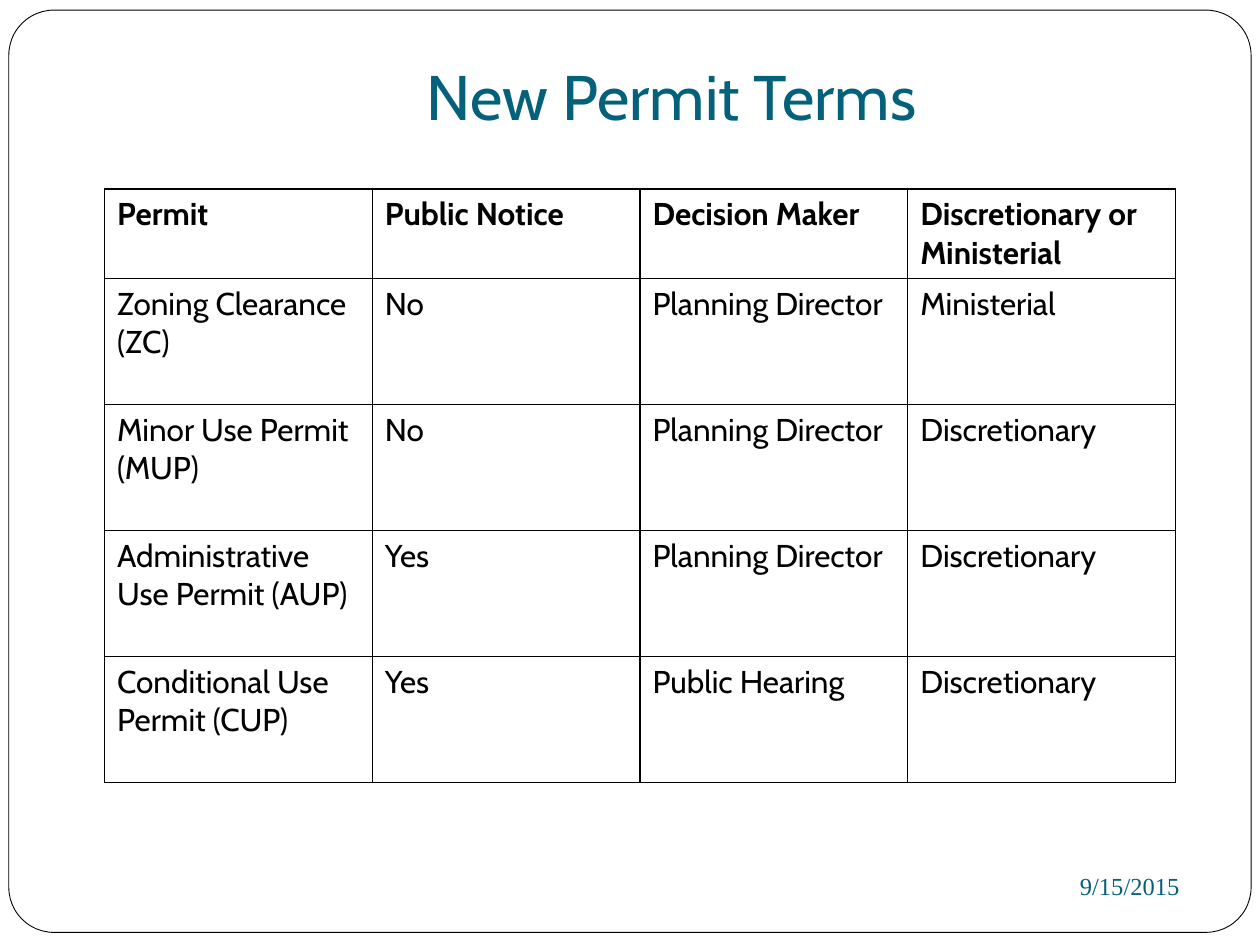
from pptx import Presentation
from pptx.dml.color import RGBColor
from pptx.enum.shapes import MSO_SHAPE
from pptx.enum.text import MSO_ANCHOR, PP_ALIGN
from pptx.oxml import parse_xml
from pptx.oxml.ns import nsdecls
from pptx.util import Inches, Pt

BLACK, WHITE, TEAL = "000000", "FFFFFF", "04617B"

PERMITS = [
    ("Permit", "Public Notice", "Decision Maker", "Discretionary or Ministerial"),
    ("Zoning Clearance\n(ZC)", "No", "Planning Director", "Ministerial"),
    ("Minor Use Permit\n(MUP)", "No", "Planning Director", "Discretionary"),
    ("Administrative Use Permit (AUP)", "Yes", "Planning Director", "Discretionary"),
    ("Conditional Use Permit (CUP)", "Yes", "Public Hearing", "Discretionary"),
]


def color(hex_value):
    return RGBColor.from_string(hex_value)


def apply(target, formats):
    for name, value in formats.items():
        setattr(target, name, value)


def write(frame, text, font, hex_value, align=PP_ALIGN.LEFT):
    frame.text = text
    for paragraph in frame.paragraphs:
        paragraph.alignment = align
        for run in paragraph.runs:
            apply(run.font, font)
            run.font.color.rgb = color(hex_value)


def add_border(slide, box):
    border = slide.shapes.add_shape(MSO_SHAPE.ROUNDED_RECTANGLE, *box)
    border.adjustments[0] = 0.049
    border.shadow.inherit = False
    border.fill.solid()
    border.fill.fore_color.rgb = color(WHITE)
    border.line.color.rgb = color(BLACK)
    border.line.width = Pt(0.5)
    # Send behind the title
    slide.shapes._spTree.insert(2, border._element)


def add_title(slide, box, text):
    title = slide.shapes.title
    apply(title, dict(zip(("left", "top", "width", "height"), box)))
    apply(title.text_frame, {
        "word_wrap": True, "vertical_anchor": MSO_ANCHOR.BOTTOM,
        "margin_left": Inches(0.1), "margin_right": Inches(0.1),
        "margin_top": Inches(0.05), "margin_bottom": Inches(0.1),
    })
    write(title.text_frame, text, {"name": "Cabin", "size": Pt(36)}, TEAL, PP_ALIGN.CENTER)


def outline_cell(cell):
    properties = cell._tc.get_or_add_tcPr()
    for position, side in enumerate(("lnL", "lnR", "lnT", "lnB")):
        properties.insert(position, parse_xml(
            f'<a:{side} {nsdecls("a")} w="{Pt(1)}"><a:solidFill>'
            f'<a:srgbClr val="{BLACK}"/></a:solidFill></a:{side}>'))


def add_permit_table(slide, box, rows):
    table = slide.shapes.add_table(len(rows), len(rows[0]), *box).table
    for column in table.columns:
        column.width = box[2] // len(rows[0])
    for r, labels in enumerate(rows):
        is_header = r == 0
        table.rows[r].height = Inches(0.5 if is_header else 1)
        for c, label in enumerate(labels):
            cell = table.cell(r, c)
            cell.fill.solid()
            cell.fill.fore_color.rgb = color(WHITE)
            outline_cell(cell)
            write(cell.text_frame, label,
                  {"name": "Cabin", "size": Pt(18), "bold": is_header}, BLACK)


def add_date(slide, box, text):
    date = slide.shapes.add_textbox(*box)
    apply(date.text_frame, {"word_wrap": True, "vertical_anchor": MSO_ANCHOR.MIDDLE})
    write(date.text_frame, text, {"name": "Times New Roman", "size": Pt(14)},
          TEAL, PP_ALIGN.RIGHT)


def box_of(*lengths):
    return [Inches(length) for length in lengths]


def main():
    deck = Presentation()
    apply(deck, {"slide_width": Inches(10), "slide_height": Inches(7.5)})
    slide = deck.slides.add_slide(deck.slide_layouts[5])
    add_border(slide, box_of(0.07, 0.08, 9.86, 7.32))
    add_title(slide, box_of(1.08, 0.33, 8.5, 0.83), "New Permit Terms")
    add_permit_table(slide, box_of(0.83, 1.5, 8.5, 4.5), PERMITS)
    add_date(slide, box_of(6.75, 6.77, 2.71, 0.52), "9/15/2015")
    deck.save("out.pptx")


if __name__ == "__main__":
    main()
